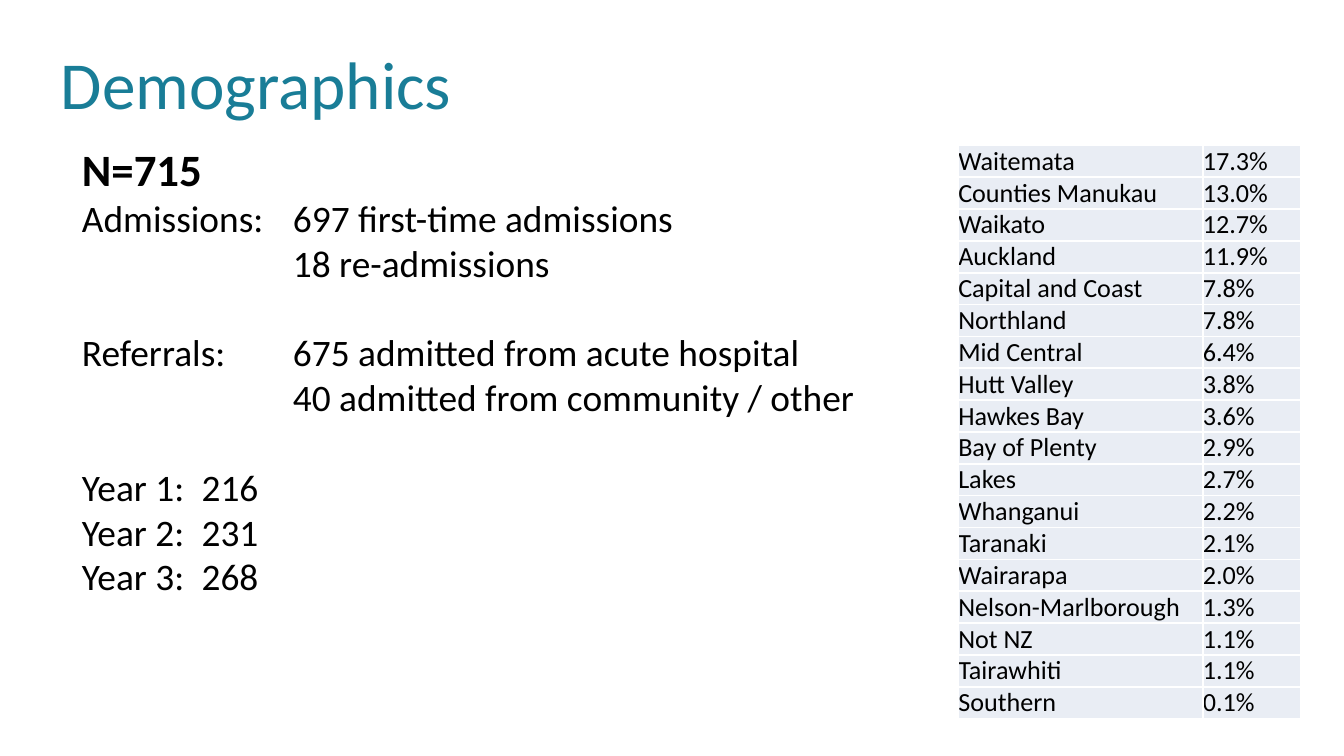
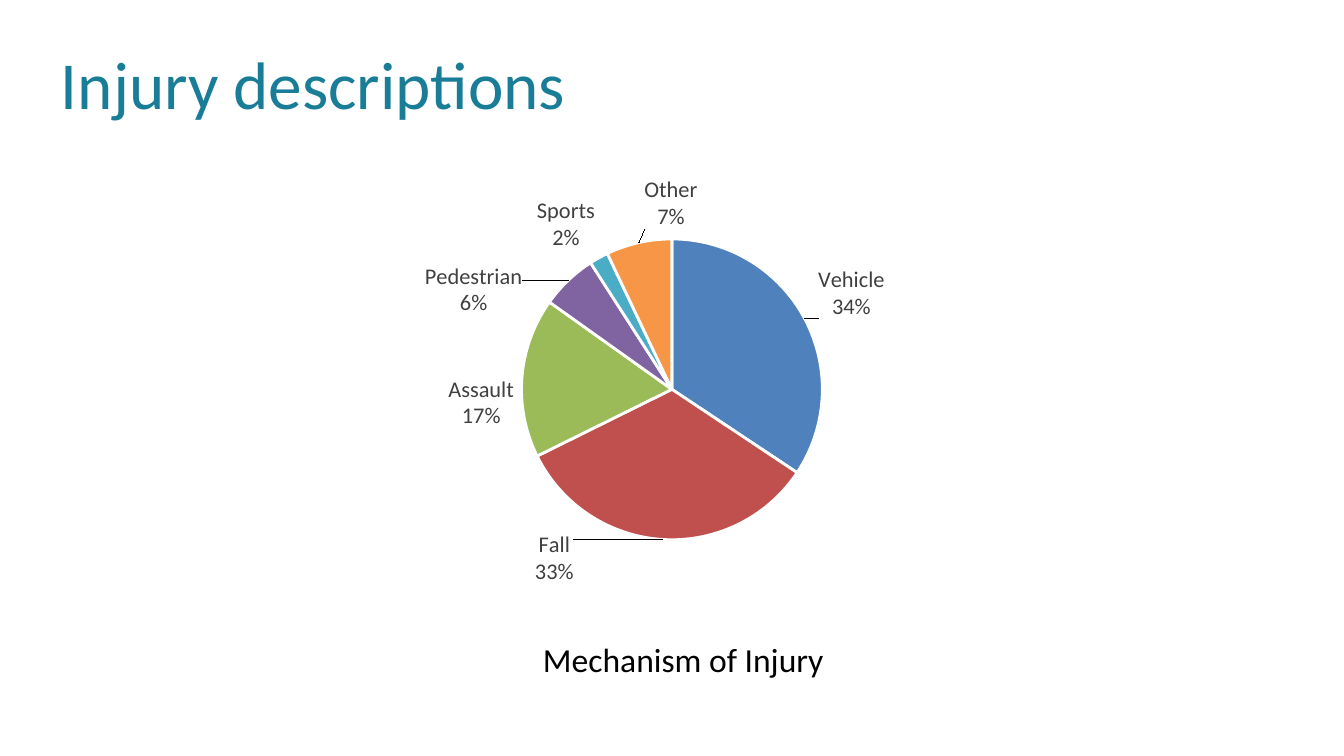
"""Build two slides on rehabilitation admissions: demographics and injury mechanisms."""
from copy import deepcopy

from lxml import etree
from pptx import Presentation
from pptx.chart.data import CategoryChartData
from pptx.dml.color import RGBColor
from pptx.enum.chart import XL_CHART_TYPE, XL_LABEL_POSITION
from pptx.enum.text import MSO_ANCHOR, MSO_AUTO_SIZE, PP_ALIGN
from pptx.oxml import parse_xml
from pptx.oxml.ns import nsdecls, qn
from pptx.util import Emu, Inches, Pt

PIE = XL_CHART_TYPE.PIE
OUTSIDE = XL_LABEL_POSITION.OUTSIDE_END
MIDDLE, BOTTOM = MSO_ANCHOR.MIDDLE, MSO_ANCHOR.BOTTOM
LEFT, CENTER = PP_ALIGN.LEFT, PP_ALIGN.CENTER
NO_AUTOFIT = MSO_AUTO_SIZE.NONE

FONT = "Calibri"
TEAL = RGBColor(0x19, 0x7D, 0x97)
BLACK = RGBColor(0x00, 0x00, 0x00)
WHITE = RGBColor(0xFF, 0xFF, 0xFF)
GREY = RGBColor(0x40, 0x40, 0x40)
PALE = RGBColor(0xE9, 0xED, 0xF4)

deck = Presentation()
deck.slide_width = Inches(10)
deck.slide_height = deck.slide_width * 9 // 16


def box(left, top, width, height):
    """Turn percentages of the slide's size into lengths."""
    w, h = deck.slide_width / 100, deck.slide_height / 100
    return Emu(int(left * w)), Emu(int(top * h)), Emu(int(width * w)), Emu(int(height * h))


def style(paragraph, size, color, bold=False, align=LEFT):
    """Format a paragraph and its runs."""
    paragraph.alignment = align
    for run in paragraph.runs:
        run.font.name, run.font.size, run.font.bold = FONT, Pt(size), bold
        run.font.color.rgb = color


slides = []
for heading, layout in (("Demographics", 1), ("Injury descriptions", 5)):
    slide = deck.slides.add_slide(deck.slide_layouts[layout])
    title = slide.shapes.title
    title.left, title.top, title.width, title.height = box(3.53, 4.09, 74, 13.7)
    title.text_frame.text = heading
    title.text_frame.vertical_anchor = MIDDLE
    title.text_frame.auto_size = NO_AUTOFIT
    style(title.text_frame.paragraphs[0], 36, TEAL)
    slides.append(slide)
demographics, injuries = slides

WIDE, NARROW = Inches(1.57), Inches(0.89)
FACTS = [
    ("N=715", 24, 0, 0, 0),
    ("Admissions:\t697 first-time admissions", 20, 0, WIDE, -WIDE),
    ("18 re-admissions", 20, 0, WIDE, 0),
    ("Referrals:\t675 admitted from acute hospital", 20, 24, WIDE, -WIDE),
    ("40 admitted from community / other", 20, 0, WIDE, 0),
    ("Year 1:\t216", 20, 24, NARROW, -NARROW),
    ("Year 2:\t231", 20, 0, NARROW, -NARROW),
    ("Year 3:\t268", 20, 0, NARROW, -NARROW),
]
facts = demographics.placeholders[1]
facts.left, facts.top, facts.width, facts.height = box(5.1, 17.79, 87.4, 62.81)
facts.text_frame.auto_size = NO_AUTOFIT
facts.text_frame.text = "\n".join(fact[0] for fact in FACTS)
for line, (wording, size, gap, margin, indent) in zip(facts.text_frame.paragraphs, FACTS):
    properties = line._p.get_or_add_pPr()
    properties.set("marL", str(margin))
    properties.set("indent", str(indent))
    etree.SubElement(properties, qn("a:buNone"))
    line.space_before = Pt(gap)
    style(line, size, BLACK, bold=size == 24)

DISTRICTS = [
    ("Waitemata", "17.3%"), ("Counties Manukau", "13.0%"), ("Waikato", "12.7%"),
    ("Auckland", "11.9%"), ("Capital and Coast", "7.8%"), ("Northland", "7.8%"),
    ("Mid Central", "6.4%"), ("Hutt Valley", "3.8%"), ("Hawkes Bay", "3.6%"),
    ("Bay of Plenty", "2.9%"), ("Lakes", "2.7%"), ("Whanganui", "2.2%"),
    ("Taranaki", "2.1%"), ("Wairarapa", "2.0%"), ("Nelson-Marlborough", "1.3%"),
    ("Not NZ", "1.1%"), ("Tairawhiti", "1.1%"), ("Southern", "0.1%"),
]
district_frame = demographics.shapes.add_table(len(DISTRICTS), 2, *box(71.3, 19.22, 25.5, 74.67))
districts = district_frame.table
districts.first_row = districts.horz_banding = False
districts.columns[0].width, districts.columns[1].width = Inches(1.82), Inches(0.73)
for row, record in enumerate(DISTRICTS):
    districts.rows[row].height = Inches(0.2)
    for column, wording in enumerate(record):
        cell = districts.cell(row, column)
        cell.text_frame.text = wording
        cell.margin_left = cell.margin_right = cell.margin_top = cell.margin_bottom = 0
        cell.vertical_anchor = BOTTOM
        cell.fill.solid()
        cell.fill.fore_color.rgb = PALE
        style(cell.text_frame.paragraphs[0], 14, BLACK)
        for place, side in enumerate(("lnL", "lnR", "lnT", "lnB")):
            cell._tc.get_or_add_tcPr().insert(place, parse_xml(
                f'<a:{side} {nsdecls("a")} w="{Pt(1)}"><a:solidFill>'
                f'<a:srgbClr val="{WHITE}"/></a:solidFill></a:{side}>'))
district_frame.height = Inches(4.2)

MECHANISMS = [
    ("Vehicle", 34, RGBColor(0x4F, 0x81, 0xBD)),
    ("Fall", 33, RGBColor(0xC0, 0x50, 0x4D)),
    ("Assault", 17, RGBColor(0x9B, 0xBB, 0x59)),
    ("Pedestrian", 6, RGBColor(0x80, 0x64, 0xA2)),
    ("Sports", 2, RGBColor(0x4B, 0xAC, 0xC6)),
    ("Other", 7, RGBColor(0xF7, 0x96, 0x46)),
]
mechanism_data = CategoryChartData()
mechanism_data.categories = [name for name, share, color in MECHANISMS]
mechanism_data.add_series("Series 1", [share for name, share, color in MECHANISMS])
pie = injuries.shapes.add_chart(PIE, *box(24, 11.03, 50, 68.62), mechanism_data).chart
pie.has_title = pie.has_legend = False
pie.font.name, pie.font.size, pie.font.color.rgb = FONT, Pt(12), BLACK

plot_area = pie.plots[0]._element.getparent()
for old_layout in plot_area.findall(qn("c:layout")):
    plot_area.remove(old_layout)
plot_area.insert(0, parse_xml(
    f'<c:layout {nsdecls("c")}><c:manualLayout><c:layoutTarget val="inner"/>'
    '<c:xMode val="edge"/><c:yMode val="edge"/><c:x val="0.29"/><c:y val="0.3"/>'
    '<c:w val="0.46"/><c:h val="0.58"/></c:manualLayout></c:layout>'))

shares = pie.plots[0].series[0]
for index, (name, share, color) in enumerate(MECHANISMS):
    wedge = shares.points[index].format
    wedge.fill.solid()
    wedge.fill.fore_color.rgb = color
    wedge.line.color.rgb = WHITE
    wedge.line.width = Pt(1.5)

labels = shares.data_labels
labels.show_value = False
labels.show_category_name = labels.show_percentage = True
labels.number_format, labels.number_format_is_linked = "0%", False
labels.position = OUTSIDE
labels.font.name, labels.font.size, labels.font.color.rgb = FONT, Pt(12), GREY
label_set = labels._element
separator = etree.Element(qn("c:separator"))
separator.text = "\n"
label_set.find(qn("c:showBubbleSize")).addnext(separator)

SHIFTS = {0: (0.01, 0.01), 1: (-0.16, -0.03), 2: (0, 0.05), 3: (-0.06, 0.08), 5: (0.09, -0.01)}
shared = [part for part in label_set if part.tag != qn("c:showLeaderLines")]
for place, (index, (across, down)) in enumerate(SHIFTS.items()):
    label = parse_xml(
        f'<c:dLbl {nsdecls("c")}><c:idx val="{index}"/><c:layout><c:manualLayout>'
        f'<c:x val="{across}"/><c:y val="{down}"/></c:manualLayout></c:layout></c:dLbl>')
    label.extend(deepcopy(part) for part in shared)
    label_set.insert(place, label)

caption = injuries.shapes.add_textbox(*box(34.3, 83.63, 33.1, 7.12)).text_frame
caption.word_wrap = True
caption.text = "Mechanism of Injury"
style(caption.paragraphs[0], 18, BLACK, align=CENTER)

deck.save("out.pptx")
